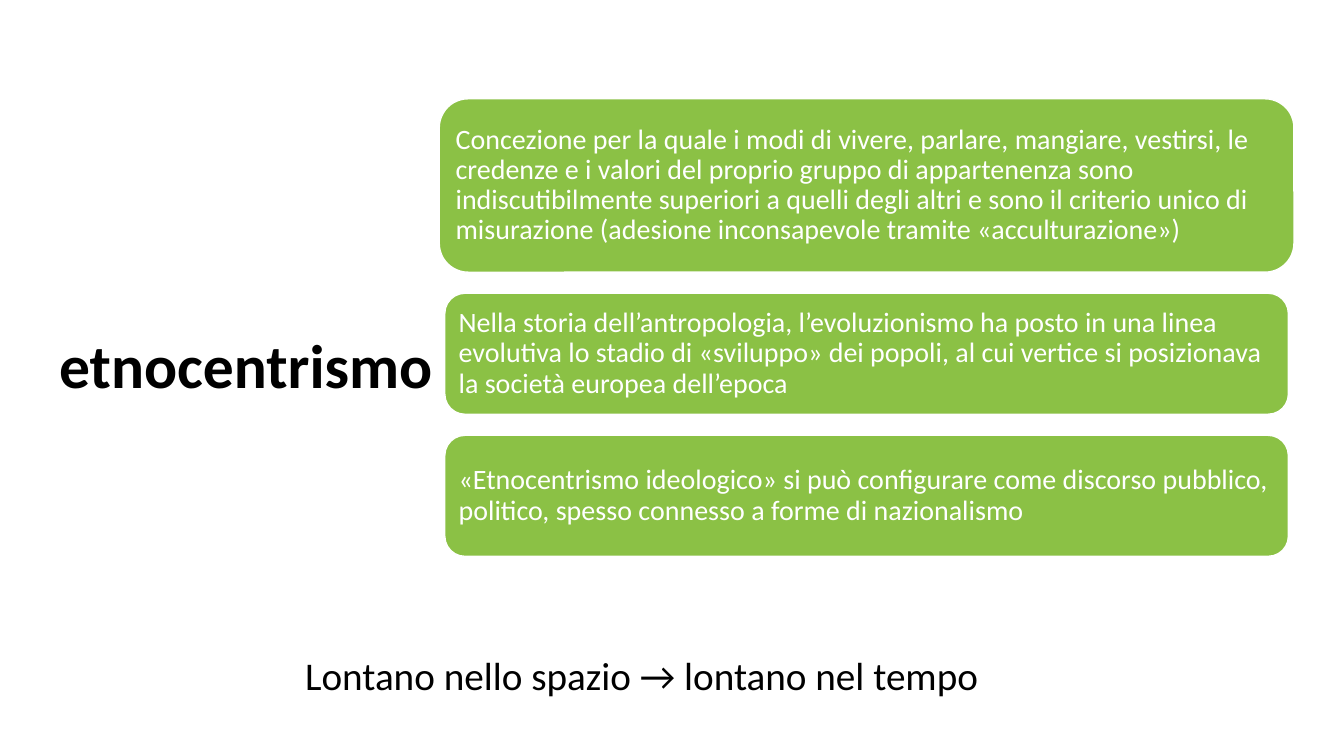
from dataclasses import dataclass

from pptx import Presentation
from pptx.dml.color import RGBColor
from pptx.enum.shapes import MSO_SHAPE
from pptx.enum.text import MSO_ANCHOR, PP_ALIGN
from pptx.util import Cm, Pt

ROUNDED = MSO_SHAPE.ROUNDED_RECTANGLE
TOP, MIDDLE = MSO_ANCHOR.TOP, MSO_ANCHOR.MIDDLE
LEFT = PP_ALIGN.LEFT

COLORS = {"green": "8BC145", "white": "FFFFFF", "black": "000000"}
FONT = "Calibri"

# Column of cards, in centimetres
CARDS_CENTER = 21.84
CARDS_TOP = 2.49
CARD_GAP = 0.53
CARD_INSET = 0.2


@dataclass
class Card:
    width: float
    height: float
    text: str


@dataclass
class Label:
    left: float
    top: float
    width: float
    height: float
    text: str
    size: int
    bold: bool
    anchor: MSO_ANCHOR
    line_spacing: float


CARDS = [
    Card(21.54, 4.37,
         "Concezione per la quale i modi di vivere, parlare, mangiare, vestirsi, le "
         "credenze e i valori del proprio gruppo di appartenenza sono "
         "indiscutibilmente superiori a quelli degli altri e sono il criterio unico di "
         "misurazione (adesione inconsapevole tramite «acculturazione»)"),
    Card(21.26, 3.05,
         "Nella storia dell’antropologia, l’evoluzionismo ha posto in una linea "
         "evolutiva lo stadio di «sviluppo» dei popoli, al cui vertice si posizionava "
         "la società europea dell’epoca"),
    Card(21.26, 3.05,
         "«Etnocentrismo ideologico» si può configurare come discorso pubblico, "
         "politico, spesso connesso a forme di nazionalismo"),
]

LABELS = [
    Label(1.24, 1.55, 10.44, 15.47, "etnocentrismo", 44, True, MIDDLE, 0.9),
    Label(7.44, 16.28, 23.34, 1.45, "Lontano nello spazio → lontano nel tempo",
          28, False, TOP, 1.0),
]


def rgb(name: str) -> RGBColor:
    return RGBColor.from_string(COLORS[name])


def set_all(obj, values: dict) -> None:
    for name, value in values.items():
        setattr(obj, name, value)


def write(sp, text: str, color: str, size: int, bold: bool,
          anchor: MSO_ANCHOR, line_spacing: float) -> None:
    tf = sp.text_frame
    set_all(tf, {"word_wrap": True, "vertical_anchor": anchor})
    p = tf.paragraphs[0]
    set_all(p, {"alignment": LEFT, "line_spacing": line_spacing})
    r = p.add_run()
    r.text = text
    set_all(r.font, {"name": FONT, "size": Pt(size), "bold": bold})
    r.font.color.rgb = rgb(color)


def add_card(s, card: Card, top: float) -> None:
    sp = s.shapes.add_shape(ROUNDED, Cm(CARDS_CENTER - card.width / 2), Cm(top),
                            Cm(card.width), Cm(card.height))
    sp.shadow.inherit = False
    sp.fill.solid()
    sp.fill.fore_color.rgb = rgb("green")
    sp.line.color.rgb = rgb("white")
    sp.line.width = Pt(1)
    sides = ("left", "top", "right", "bottom")
    set_all(sp.text_frame, {f"margin_{side}": Cm(CARD_INSET) for side in sides})
    write(sp, card.text, "white", 20, False, MIDDLE, 0.9)


def add_label(s, label: Label) -> None:
    sp = s.shapes.add_textbox(Cm(label.left), Cm(label.top),
                              Cm(label.width), Cm(label.height))
    write(sp, label.text, "black", label.size, label.bold,
          label.anchor, label.line_spacing)


def main() -> None:
    prs = Presentation()
    set_all(prs, {"slide_width": Cm(33.87), "slide_height": Cm(19.05)})
    s = prs.slides.add_slide(prs.slide_layouts[6])

    # Heading and closing line
    for label in LABELS:
        add_label(s, label)

    # Stacked cards
    top = CARDS_TOP
    for card in CARDS:
        add_card(s, card, top)
        top += card.height + CARD_GAP

    prs.save("out.pptx")


if __name__ == "__main__":
    main()
